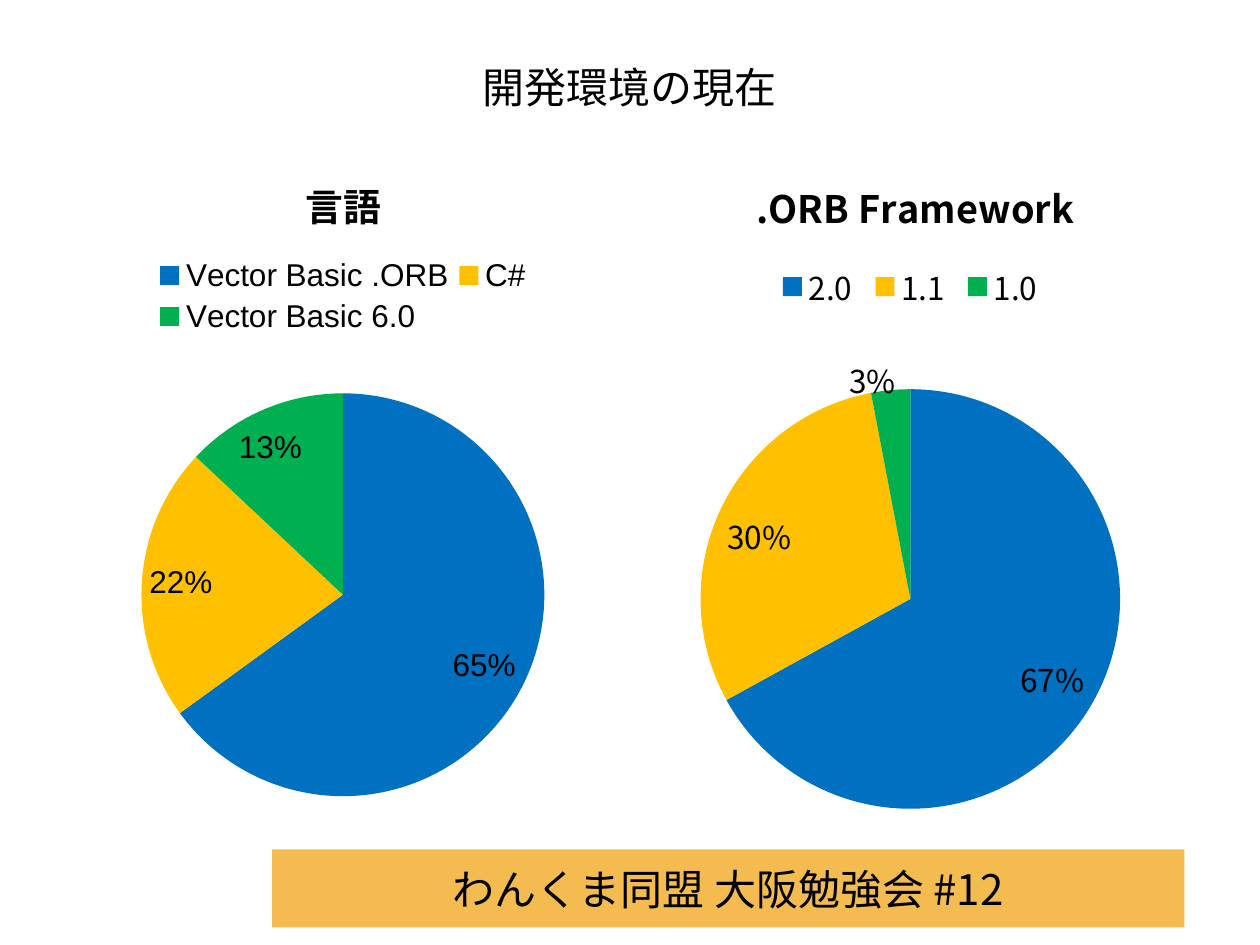
from typing import NamedTuple

from lxml import etree
from pptx import Presentation, util as u
from pptx.chart.data import CategoryChartData
from pptx.dml.color import RGBColor
from pptx.enum import chart as ch, shapes, text
from pptx.oxml.ns import qn

BLACK = RGBColor(0x00, 0x00, 0x00)
BANNER_FILL = RGBColor(0xF3, 0xBB, 0x50)
SLICE_COLORS = (
    RGBColor(0x00, 0x70, 0xC0),
    RGBColor(0xFF, 0xC0, 0x00),
    RGBColor(0x00, 0xB0, 0x50),
)
JAPANESE = "Noto Sans CJK JP"


class Box(NamedTuple):
    left: float
    top: float
    width: float
    height: float

    def lengths(self) -> list:
        return [u.Inches(value) for value in self]


class Pie(NamedTuple):
    title: str
    shares: dict
    font: str
    frame: Box
    # Fractions of the chart frame
    title_at: tuple
    legend_at: Box
    plot_at: Box
    label_shifts: dict


PIES = (
    Pie("言語", {"Vector Basic .ORB": 65, "C#": 22, "Vector Basic 6.0": 13},
        "Arial", Box(0, 1.15, 5.39, 5.33), (0.44, 0.03),
        Box(0.22, 0.16, 0.57, 0.13), Box(0.2, 0.37, 0.61, 0.6),
        {2: (-0.04, 0.02)}),
    Pie(".ORB Framework", {"2.0": 67, "1.1": 30, "1.0": 3},
        JAPANESE, Box(4.45, 1.17, 5.55, 5.39), (0.27, 0.03),
        Box(0.3, 0.17, 0.4, 0.07), Box(0.2, 0.35, 0.6, 0.63),
        {2: (-0.06, -0.06)}),
)


def format_font(font, name: str, size: float, bold: bool = False) -> None:
    values = {"name": name, "size": u.Pt(size), "bold": bold}
    for attribute, value in values.items():
        setattr(font, attribute, value)
    font.color.rgb = BLACK


def write(frame, content: str, size: float, bold: bool = False) -> None:
    paragraph = frame.paragraphs[0]
    paragraph.alignment = text.PP_ALIGN.CENTER
    run = paragraph.add_run()
    run.text = content
    format_font(run.font, JAPANESE, size, bold)
    east_asian = etree.SubElement(run._r.get_or_add_rPr(), qn("a:ea"))
    east_asian.set("typeface", JAPANESE)


def place(element, position: tuple, after: str = "", inner: bool = False,
          absolute: bool = True) -> None:
    """Give a chart part a manual layout, after the named child if any."""
    for old in element.findall(qn("c:layout")):
        element.remove(old)
    layout = etree.Element(qn("c:layout"))
    manual = etree.SubElement(layout, qn("c:manualLayout"))
    settings = [("layoutTarget", "inner")] if inner else []
    if absolute:
        settings += [("xMode", "edge"), ("yMode", "edge")]
    settings += zip("xywh", position)
    for tag, value in settings:
        etree.SubElement(manual, qn(f"c:{tag}")).set("val", str(value))
    index = element.index(element.find(qn(after))) + 1 if after else 0
    element.insert(index, layout)


def add_pie(slide, pie: Pie) -> None:
    data = CategoryChartData()
    data.categories = list(pie.shares)
    data.add_series(pie.title, list(pie.shares.values()))
    chart = slide.shapes.add_chart(
        ch.XL_CHART_TYPE.PIE, *pie.frame.lengths(), data).chart
    format_font(chart.font, pie.font, 18)

    # Title and legend
    chart.has_title = True
    write(chart.chart_title.text_frame, pie.title, 21.6, bold=True)
    chart.chart_title.include_in_layout = False
    chart.has_legend = True
    chart.legend.position = ch.XL_LEGEND_POSITION.TOP
    chart.legend.include_in_layout = False
    format_font(chart.legend.font, pie.font, 18)

    # Slices
    plot = chart.plots[0]
    plot.vary_by_categories = True
    series = plot.series[0]
    for index, color in enumerate(SLICE_COLORS):
        fill = series.points[index].format.fill
        fill.solid()
        fill.fore_color.rgb = color

    # Percentages
    labels = series.data_labels
    values = {"show_percentage": True, "show_value": False,
              "position": ch.XL_LABEL_POSITION.INSIDE_END}
    for attribute, value in values.items():
        setattr(labels, attribute, value)
    format_font(labels.font, pie.font, 18)
    for index, shift in pie.label_shifts.items():
        label = series.points[index].data_label
        format_font(label.font, pie.font, 18)
        label.position = ch.XL_LABEL_POSITION.INSIDE_END
        element = chart.element.xpath(f".//c:dLbl[c:idx/@val='{index}']")[0]
        element.find(qn("c:showVal")).set("val", "0")
        element.find(qn("c:showPercent")).set("val", "1")
        place(element, shift, after="c:idx", absolute=False)

    # Arrangement inside the frame
    root = chart.element
    place(root.find(".//" + qn("c:title")), pie.title_at, after="c:tx")
    place(root.find(".//" + qn("c:legend")), pie.legend_at, after="c:legendPos")
    place(root.find(".//" + qn("c:plotArea")), pie.plot_at, inner=True)


def add_banner(slide, content: str, box: Box) -> None:
    banner = slide.shapes.add_shape(
        shapes.MSO_SHAPE.RECTANGLE, *box.lengths())
    banner.shadow.inherit = False
    banner.fill.solid()
    banner.fill.fore_color.rgb = BANNER_FILL
    banner.line.fill.background()
    banner.text_frame.vertical_anchor = text.MSO_ANCHOR.MIDDLE
    write(banner.text_frame, content, 24)


def add_heading(slide, content: str, box: Box) -> None:
    frame = slide.shapes.add_textbox(*box.lengths()).text_frame
    frame.word_wrap = True
    frame.vertical_anchor = text.MSO_ANCHOR.MIDDLE
    write(frame, content, 24)


def main() -> None:
    deck = Presentation()
    deck.slide_width, deck.slide_height = u.Inches(10), u.Inches(7.5)
    slide = deck.slides.add_slide(deck.slide_layouts[6])
    add_banner(slide, "わんくま同盟 大阪勉強会 #12", Box(2.16, 6.74, 7.24, 0.62))
    add_heading(slide, "開発環境の現在", Box(0.5, 0.3, 9, 0.77))
    for pie in PIES:
        add_pie(slide, pie)
    deck.save("out.pptx")


if __name__ == "__main__":
    main()
